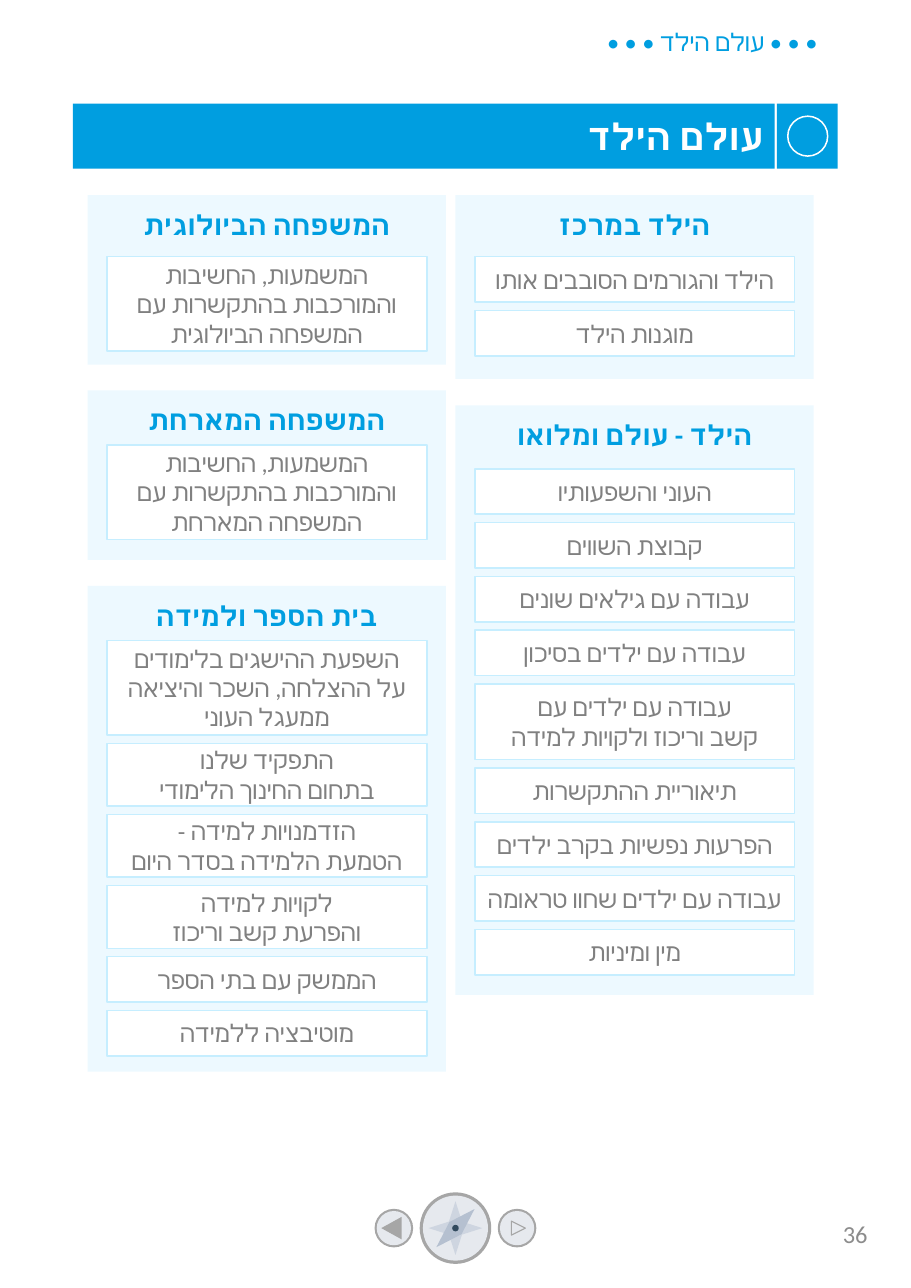
from lxml import etree
from pptx import Presentation
from pptx.dml.color import RGBColor
from pptx.enum.shapes import MSO_SHAPE as SHAPE
from pptx.enum.text import MSO_ANCHOR as ANCHOR, MSO_AUTO_SIZE as AUTO, PP_ALIGN as ALIGN
from pptx.oxml.ns import qn
from pptx.util import Cm, Pt

BLUE, PALE, WHITE = "009EE0", "C6EEFF", "FFFFFF"
TEXT_GRAY, RING_GRAY, DISC_GRAY = "808080", "A6A6A6", "E6E9EE"
HEAD_FONT, BODY_FONT, HEBREW_FONT = "Noto Sans Mono", "Calibri", "Calibri"

TITLE = "עולם הילד"
RUNNING_HEAD = "• • • עולם הילד • • •"
PAGE_NUMBER = "36"

RIGHT_X, LEFT_X = 10.5, 2.02
CARD_W, ITEM_W, ITEM_INSET, ITEM_GAP = 8.26, 7.37, 0.45, 0.19
ONE, TWO, TWO_TALL, THREE = 1.05, 1.45, 1.75, 2.18

CARDS = [
    (RIGHT_X, 4.5, 4.24, 5.92, "הילד במרכז", [
        ("הילד והגורמים הסובבים אותו", ONE),
        ("מוגנות הילד", ONE),
    ]),
    (RIGHT_X, 9.35, 13.59, 10.81, "הילד - עולם ומלואו", [
        ("העוני והשפעותיו", ONE),
        ("קבוצת השווים", ONE),
        ("עבודה עם גילאים שונים", ONE),
        ("עבודה עם ילדים בסיכון", ONE),
        ("עבודה עם ילדים עם\nקשב וריכוז ולקויות למידה", TWO_TALL),
        ("תיאוריית ההתקשרות", ONE),
        ("הפרעות נפשיות בקרב ילדים", ONE),
        ("עבודה עם ילדים שחוו טראומה", ONE),
        ("מין ומיניות", ONE),
    ]),
    (LEFT_X, 4.5, 3.91, 5.92, "המשפחה הביולוגית", [
        ("המשמעות, החשיבות והמורכבות בהתקשרות עם המשפחה הביולוגית", THREE),
    ]),
    (LEFT_X, 9, 3.91, 10.26, "המשפחה המארחת", [
        ("המשמעות, החשיבות והמורכבות בהתקשרות עם המשפחה המארחת", THREE),
    ]),
    (LEFT_X, 13.51, 11.2, 14.77, "בית הספר ולמידה", [
        ("השפעת ההישגים בלימודים\nעל ההצלחה, השכר והיציאה ממעגל העוני", THREE),
        ("התפקיד שלנו\nבתחום החינוך הלימודי", TWO),
        ("הזדמנויות למידה -\nהטמעת הלמידה בסדר היום", TWO),
        ("לקויות למידה\nוהפרעת קשב וריכוז", TWO),
        ("הממשק עם בתי הספר", ONE),
        ("מוטיבציה ללמידה", ONE),
    ]),
]

NAV_Y = 28.32
DISC_COLORS = [WHITE, RING_GRAY, DISC_GRAY]
NAV_BUTTONS = [
    (10.5, [1.85, 1.65, 1.5], [
        ([(-0.15, 0.15), (0, 0.62), (0.15, 0.15), (0.62, 0),
          (0.15, -0.15), (0, -0.62), (-0.15, -0.15), (-0.62, 0)], "CED5E0", None),
        ([(-0.14, -0.14), (-0.44, 0.44), (0.14, 0.14), (0.44, -0.44)], "B5C0D0", None),
    ]),
    (11.92, [0.99, 0.89, 0.79], [
        ([(-0.13, -0.16), (0.19, 0), (-0.13, 0.16)], None, RING_GRAY),
    ]),
    (9.08, [0.99, 0.89, 0.79], [
        ([(-0.29, 0), (0.18, -0.26), (0.18, 0.26)], RING_GRAY, None),
    ]),
]


def rgb(color):
    return RGBColor.from_string(color)


def paint(sp, fill=None, line=None, width=1, alpha=None):
    sp.shadow.inherit = False
    if fill:
        sp.fill.solid()
        sp.fill.fore_color.rgb = rgb(fill)
    else:
        sp.fill.background()
    if line:
        sp.line.color.rgb = rgb(line)
        sp.line.width = Pt(width)
    else:
        sp.line.fill.background()
    if alpha:
        color = sp.fill._xPr.find(qn("a:solidFill"))[0]
        etree.SubElement(color, qn("a:alpha")).set("val", str(alpha * 1000))


def write(sp, text, size, color, font=BODY_FONT, bold=False,
          align=ALIGN.CENTER, anchor=ANCHOR.MIDDLE, rtl=True):
    tf = sp.text_frame
    tf.word_wrap = True
    tf.auto_size = AUTO.NONE
    tf.vertical_anchor = anchor
    p = tf.paragraphs[0]
    p.text = text
    p.alignment = align
    if rtl:
        p._p.get_or_add_pPr().set("rtl", "1")
    f = p.font
    f.name, f.size, f.bold = font, Pt(size), bold
    f.color.rgb = rgb(color)
    etree.SubElement(f._rPr, qn("a:cs")).set("typeface", HEBREW_FONT)


def add_box(s, kind, x, y, w, h, **style):
    sp = s.shapes.add_shape(kind, Cm(x), Cm(y), Cm(w), Cm(h))
    paint(sp, **style)
    return sp


def add_disc(s, x, y, d, **style):
    return add_box(s, SHAPE.OVAL, x - d / 2, y - d / 2, d, d, **style)


def add_polygon(s, x, y, offsets, fill, line):
    points = [(Cm(x + dx), Cm(y + dy)) for dx, dy in offsets]
    builder = s.shapes.build_freeform(*points[0])
    builder.add_line_segments(points[1:], close=True)
    paint(builder.convert_to_shape(), fill, line, 0.75)


def add_header(s):
    head = s.shapes.add_textbox(Cm(11.99), Cm(0.51), Cm(7.11), Cm(0.94))
    write(head, RUNNING_HEAD, 16, BLUE, align=ALIGN.RIGHT, anchor=ANCHOR.TOP)
    title = s.shapes.title
    title.left, title.top, title.width, title.height = Cm(1.68), Cm(2.39), Cm(16.18), Cm(1.5)
    paint(title, BLUE)
    write(title, TITLE, 24, WHITE, HEAD_FONT, True, ALIGN.RIGHT)
    add_box(s, SHAPE.RECTANGLE, 17.91, 2.39, 1.4, 1.5, fill=BLUE)
    add_disc(s, 18.62, 3.14, 0.92, fill=BLUE, line=WHITE)


def add_card(s, x, y, h, item_y, heading, items):
    card = add_box(s, SHAPE.RECTANGLE, x, y, CARD_W, h, fill=PALE, alpha=30)
    card.text_frame.margin_top = Cm(0.3)
    write(card, heading, 18, BLUE, HEAD_FONT, True, anchor=ANCHOR.TOP)
    for text, item_h in items:
        item = add_box(s, SHAPE.RECTANGLE, x + ITEM_INSET, item_y, ITEM_W, item_h,
                       fill=WHITE, line=PALE)
        write(item, text, 16, TEXT_GRAY)
        item_y += item_h + ITEM_GAP


def add_navigation(s):
    for x, diameters, polygons in NAV_BUTTONS:
        for d, color in zip(diameters, DISC_COLORS):
            add_disc(s, x, NAV_Y, d, fill=color)
        for offsets, fill, line in polygons:
            add_polygon(s, x, NAV_Y, offsets, fill, line)
    add_disc(s, NAV_BUTTONS[0][0], NAV_Y, 0.15, fill="324A5E")
    number = s.shapes.add_textbox(Cm(18.75), Cm(27.66), Cm(1.5), Cm(1.57))
    write(number, PAGE_NUMBER, 16, "8C8C8C", align=ALIGN.RIGHT, rtl=False)


def main():
    prs = Presentation()
    prs.slide_width, prs.slide_height = Cm(21), Cm(29.7)
    s = prs.slides.add_slide(prs.slide_layouts[5])
    add_header(s)
    for card in CARDS:
        add_card(s, *card)
    add_navigation(s)
    prs.save("out.pptx")


if __name__ == "__main__":
    main()
